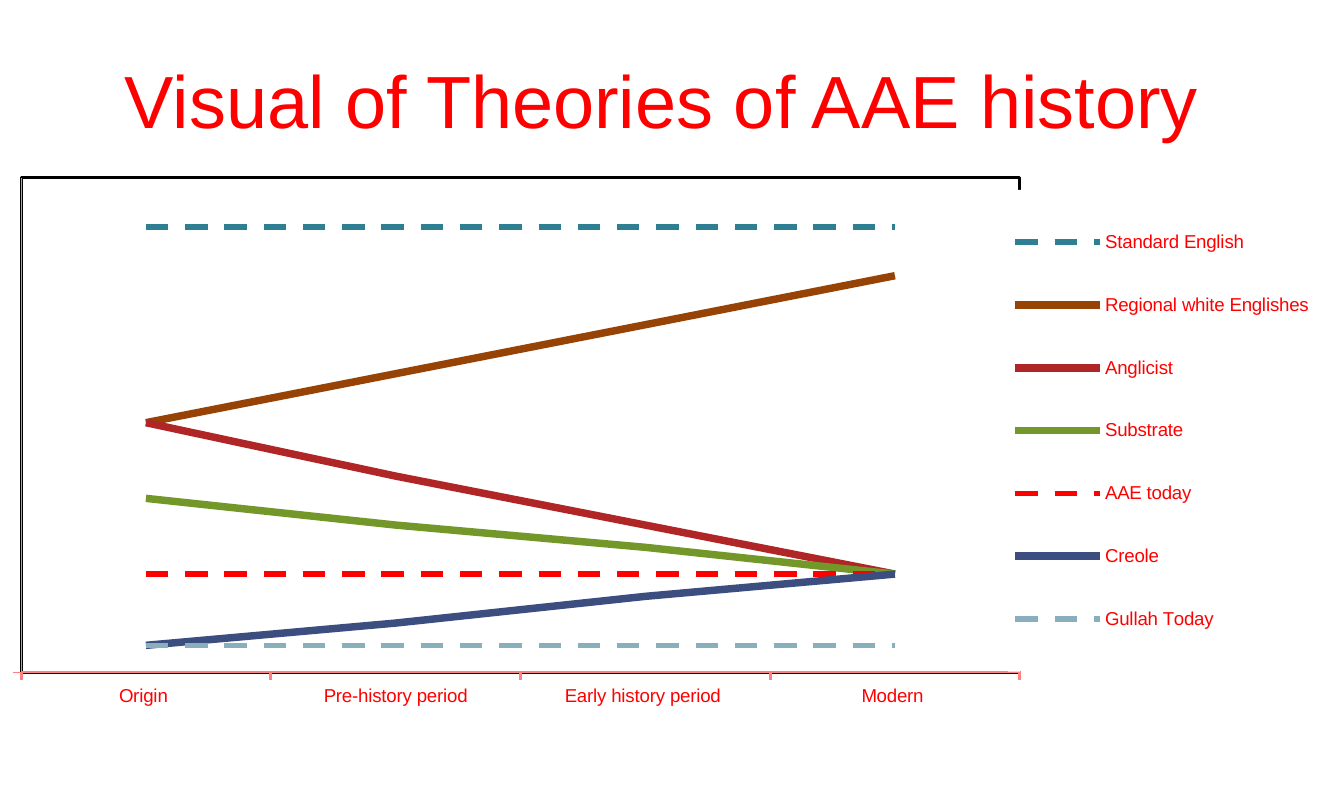
from dataclasses import dataclass

from lxml import etree
from pptx import Presentation
from pptx.chart.data import CategoryChartData
from pptx.dml.color import RGBColor
from pptx.enum.chart import XL_CHART_TYPE as ChartType
from pptx.enum.chart import XL_LEGEND_POSITION as LegendPosition
from pptx.enum.chart import XL_TICK_LABEL_POSITION as LabelPosition
from pptx.enum.chart import XL_TICK_MARK as TickMark
from pptx.enum.dml import MSO_LINE_DASH_STYLE as DashStyle
from pptx.enum.text import MSO_ANCHOR, PP_ALIGN
from pptx.util import Inches, Pt

CHART_NS = "http://schemas.openxmlformats.org/drawingml/2006/chart"
DRAWING_NS = "http://schemas.openxmlformats.org/drawingml/2006/main"


@dataclass(frozen=True)
class Theme:
    font: str = "Arial"
    title_size: float = 39.6
    chart_size: float = 10
    text: str = "FF0000"
    background: str = "FFFFFF"
    border: str = "000000"
    axis: str = "FF8080"
    standard: str = "2F7F92"
    regional: str = "964305"
    anglicist: str = "B02525"
    substrate: str = "739729"
    today: str = "FF0000"
    creole: str = "3C4D80"
    gullah: str = "8AAFBC"
    solid_width: float = 4
    dashed_width: float = 3
    frame_width: float = 1.5


THEME = Theme()
PERIODS = ["Origin ", "Pre-history period", "Early history period ", "Modern "]

# Name, values, colour, dashed
THEORIES = [
    ("Standard English ", [100] * 4, THEME.standard, True),
    ("Regional white Englishes ", [56, 67, 78, 89], THEME.regional, False),
    ("Anglicist ", [56, 44, 33, 22], THEME.anglicist, False),
    ("Substrate ", [39, 33, 28, 22], THEME.substrate, False),
    ("AAE today", [22] * 4, THEME.today, True),
    ("Creole", [6, 11, 17, 22], THEME.creole, False),
    ("Gullah Today", [6] * 4, THEME.gullah, True),
]


def manual_layout(left, top, width, height, inner=False):
    """Layout element with fractions of the chart area."""
    target = '<c:layoutTarget val="inner"/>' if inner else ""
    return etree.fromstring(
        f'<c:layout xmlns:c="{CHART_NS}"><c:manualLayout>{target}'
        '<c:xMode val="edge"/><c:yMode val="edge"/>'
        f'<c:x val="{left}"/><c:y val="{top}"/>'
        f'<c:w val="{width}"/><c:h val="{height}"/>'
        "</c:manualLayout></c:layout>"
    )


def area_format(fill, border=None, border_width=0):
    """Fill and outline for the plot area or the legend."""
    line = "<a:ln><a:noFill/></a:ln>"
    if border:
        line = (f'<a:ln w="{Pt(border_width)}"><a:solidFill>'
                f'<a:srgbClr val="{border}"/></a:solidFill></a:ln>')
    return etree.fromstring(
        f'<c:spPr xmlns:c="{CHART_NS}" xmlns:a="{DRAWING_NS}">'
        f'<a:solidFill><a:srgbClr val="{fill}"/></a:solidFill>{line}</c:spPr>'
    )


class SlideBuilder:
    def __init__(self, presentation, theme):
        self.theme = theme
        self.slide = presentation.slides.add_slide(presentation.slide_layouts[5])
        fill = self.slide.background.fill
        fill.solid()
        fill.fore_color.rgb = RGBColor.from_string(theme.background)

    def style_font(self, font, size):
        font.name = self.theme.font
        font.size = Pt(size)
        font.color.rgb = RGBColor.from_string(self.theme.text)

    def style_line(self, line, color, width, dashed=False):
        line.color.rgb = RGBColor.from_string(color)
        line.width = Pt(width)
        if dashed:
            line.dash_style = DashStyle.DASH

    def title(self, text, left, top, width, height):
        shape = self.slide.shapes.title
        shape.left, shape.top = Inches(left), Inches(top)
        shape.width, shape.height = Inches(width), Inches(height)
        shape.text_frame.text = text
        shape.text_frame.vertical_anchor = MSO_ANCHOR.MIDDLE
        paragraph = shape.text_frame.paragraphs[0]
        paragraph.alignment = PP_ALIGN.CENTER
        self.style_font(paragraph.runs[0].font, self.theme.title_size)

    def line_chart(self, categories, rows, left, top, width, height):
        data = CategoryChartData()
        data.categories = categories
        for name, values, _, _ in rows:
            data.add_series(name, values)
        chart = self.slide.shapes.add_chart(
            ChartType.LINE, Inches(left), Inches(top),
            Inches(width), Inches(height), data,
        ).chart
        chart.has_title = False
        self.style_font(chart.font, self.theme.chart_size)
        chart.plots[0].vary_by_categories = False
        for series, (_, _, color, dashed) in zip(chart.plots[0].series, rows):
            series.smooth = False
            line_width = self.theme.dashed_width if dashed else self.theme.solid_width
            self.style_line(series.format.line, color, line_width, dashed)
        self.axes(chart)
        self.plot_area(chart)
        self.legend(chart)

    def axes(self, chart):
        theme = self.theme
        category_axis, value_axis = chart.category_axis, chart.value_axis
        for axis in (category_axis, value_axis):
            axis.major_tick_mark = TickMark.OUTSIDE
            axis.minor_tick_mark = TickMark.NONE
        self.style_line(category_axis.format.line, theme.axis, theme.frame_width)
        self.style_line(value_axis.format.line, theme.axis, 0.5)
        value_axis.minimum_scale = 0
        value_axis.maximum_scale = 111
        value_axis.major_unit = 133
        value_axis.tick_label_position = LabelPosition.NONE
        value_axis.has_major_gridlines = True
        self.style_line(value_axis.major_gridlines.format.line, theme.axis,
                        theme.frame_width)

    def plot_area(self, chart):
        theme = self.theme
        area = chart.element.find(f".//{{{CHART_NS}}}plotArea")
        for layout in area.findall(f"{{{CHART_NS}}}layout"):
            area.remove(layout)
        area.insert(0, manual_layout(0.016, 0.036, 0.756, 0.862, inner=True))
        area.append(area_format(theme.background, theme.border, theme.frame_width))

    def legend(self, chart):
        chart.has_legend = True
        legend = chart.legend
        legend.position = LegendPosition.RIGHT
        legend.include_in_layout = False
        self.style_font(legend.font, self.theme.chart_size)
        element = chart.element.find(f".//{{{CHART_NS}}}legend")
        for layout in element.findall(f"{{{CHART_NS}}}layout"):
            element.remove(layout)
        element.find(f"{{{CHART_NS}}}legendPos").addnext(
            manual_layout(0.763, 0.057, 0.237, 0.84))
        element.find(f"{{{CHART_NS}}}overlay").addnext(
            area_format(self.theme.background))


def main():
    presentation = Presentation()
    presentation.slide_width, presentation.slide_height = Inches(10), Inches(6)
    builder = SlideBuilder(presentation, THEME)

    # Title
    builder.title("Visual of Theories of AAE history ", 0.5, 0.24, 9, 1)

    # Theories over time
    builder.line_chart(PERIODS, THEORIES, 0, 1.17, 9.83, 4.27)

    presentation.save("out.pptx")


if __name__ == "__main__":
    main()
